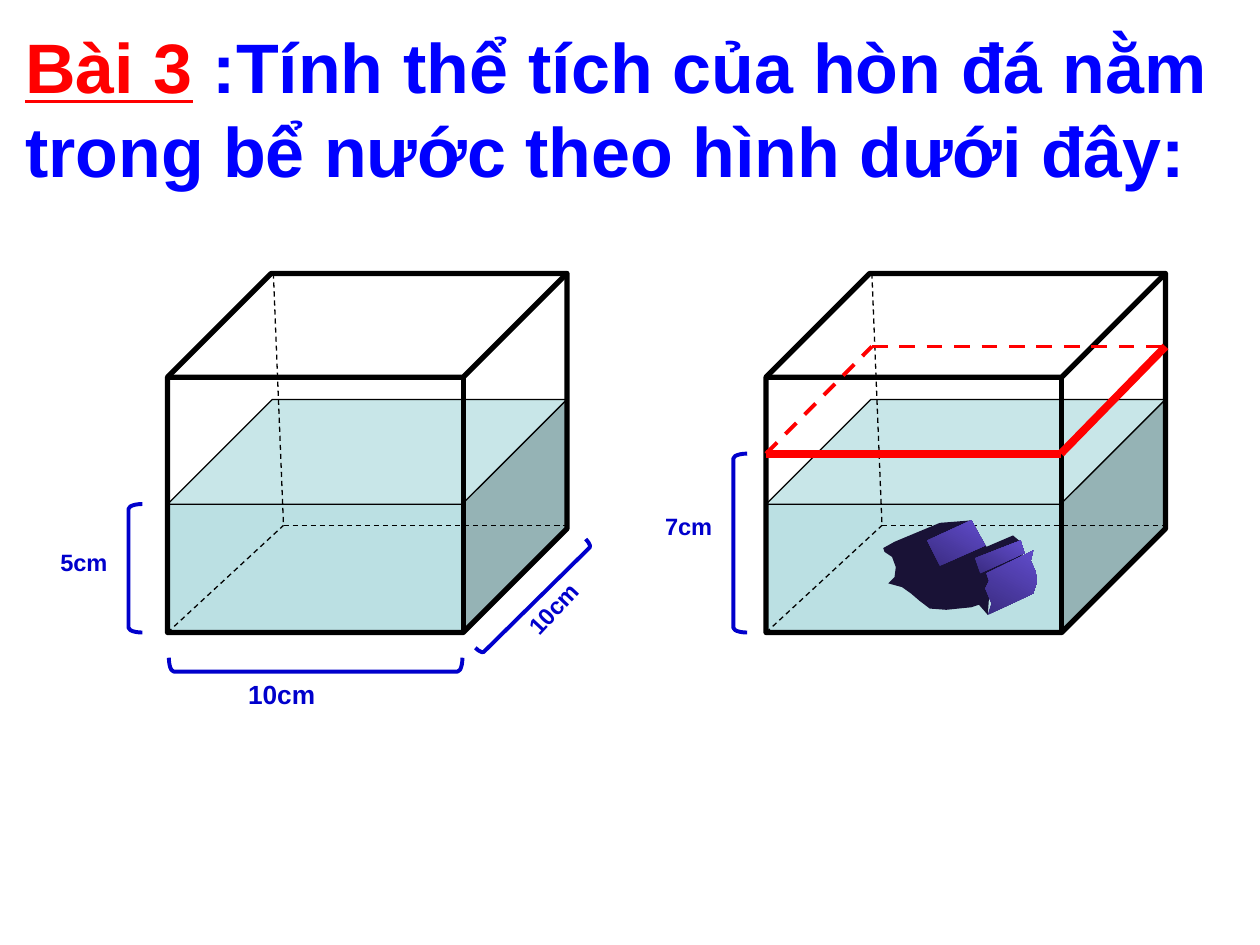
from dataclasses import dataclass
from lxml import etree
from pptx import Presentation
from pptx.dml.color import RGBColor
from pptx.enum.dml import MSO_LINE
from pptx.enum.shapes import MSO_CONNECTOR, MSO_SHAPE
from pptx.enum.text import MSO_ANCHOR, MSO_AUTO_SIZE, PP_ALIGN
from pptx.oxml.ns import qn
from pptx.util import Inches, Pt

CUBE = MSO_SHAPE.CUBE
BRACKET = MSO_SHAPE.RIGHT_BRACKET
STRAIGHT = MSO_CONNECTOR.STRAIGHT
DASH = MSO_LINE.DASH
TITLE_ONLY = 5

Point = tuple[float, float]


@dataclass(frozen=True)
class Theme:
    font: str = "Arial"
    title_size: float = 40
    label_size: float = 13.5
    base_label_size: float = 15
    thin: float = 0.75
    medium: float = 2.25
    edge: float = 3
    heavy: float = 4.5
    black: RGBColor = RGBColor(0, 0, 0)
    red: RGBColor = RGBColor(255, 0, 0)
    title_blue: RGBColor = RGBColor(0, 0, 255)
    measure_blue: RGBColor = RGBColor(0, 0, 0xCC)
    water: RGBColor = RGBColor(0xBB, 0xE0, 0xE3)
    rock_dark: RGBColor = RGBColor(0x19, 0x12, 0x36)
    rock_shade: RGBColor = RGBColor(0x3A, 0x2C, 0x82)
    rock_light: RGBColor = RGBColor(0x61, 0x4C, 0xCB)


THEME = Theme()


@dataclass(frozen=True)
class Box:
    left: float
    top: float
    width: float
    height: float

    def lengths(self):
        return [Inches(v) for v in (self.left, self.top, self.width, self.height)]


@dataclass(frozen=True)
class Measure:
    """A bracket along one edge of a tank, with its length."""
    text: str
    label: Box
    bracket: Box
    bracket_turn: float
    label_turn: float = 0
    size: float = THEME.label_size
    grouped: bool = False


MEASURES = [
    Measure("5cm", Box(0.38, 4.3, 0.69, 0.33), Box(1.02, 4, 0.11, 1.02), 180, grouped=True),
    Measure("10cm", Box(1.87, 5.33, 1.22, 0.35), Box(2.45, 4.11, 0.11, 2.33), 90,
            size=THEME.base_label_size),
    Measure("10cm", Box(4.05, 4.66, 0.69, 0.33), Box(4.2, 4.12, 0.07, 1.23), 45.4, 312.8),
    Measure("7cm", Box(5.18, 4.01, 0.69, 0.33), Box(5.82, 3.6, 0.11, 1.42), 180, grouped=True),
]

TANK_LEFTS = (1.33, 6.08)
TANK_TOP, TANK_BOTTOM, TANK_WIDTH, TANK_DEPTH = 2.17, 5.02, 3.17, 0.83
WATER_TOP = 3.17

# Rock: dark body first, then the lit sides
ROCK_BODY = [(7.01, 4.35), (7.1, 4.3), (7.46, 4.15), (7.71, 4.13), (7.83, 4.34),
             (8.04, 4.25), (8.1, 4.3), (8.12, 4.4), (7.86, 4.6), (7.84, 4.88),
             (7.77, 4.8), (7.71, 4.82), (7.51, 4.84), (7.38, 4.83), (7.3, 4.77),
             (7.23, 4.71), (7.16, 4.66), (7.05, 4.63), (7.1, 4.58), (7.11, 4.5),
             (7.08, 4.42), (7.02, 4.38)]
ROCK_SIDES = [
    [(7.36, 4.29), (7.71, 4.13), (7.82, 4.33), (7.46, 4.49)],
    [(7.74, 4.43), (8.1, 4.29), (8.13, 4.39), (7.78, 4.55)],
    [(7.83, 4.55), (8.2, 4.37), (8.18, 4.45), (8.22, 4.54), (8.23, 4.62),
     (8.2, 4.71), (7.84, 4.88), (7.87, 4.79), (7.82, 4.67), (7.85, 4.61)],
]


def add_run(paragraph, text: str, *, size: float, color: RGBColor, underline: bool = False):
    run = paragraph.add_run()
    run.text = text
    font = run.font
    font.name, font.size, font.bold = THEME.font, Pt(size), True
    font.color.rgb, font.underline = color, underline


def add_outlined(shapes, preset, box: Box, adjustment: float, *, color: RGBColor,
                 width: float, fill: RGBColor | None = None, turn: float = 0):
    shape = shapes.add_shape(preset, *box.lengths())
    shape.shadow.inherit = False
    shape.adjustments[0] = adjustment
    shape.rotation = turn
    shape.line.color.rgb, shape.line.width = color, Pt(width)
    if fill is None:
        shape.fill.background()
    else:
        shape.fill.solid()
        shape.fill.fore_color.rgb = fill


def add_line(shapes, start: Point, end: Point, *, color: RGBColor, width: float, dash=None):
    connector = shapes.add_connector(STRAIGHT, *map(Inches, start + end))
    connector.line.color.rgb, connector.line.width = color, Pt(width)
    if dash is not None:
        connector.line.dash_style = dash
    etree.SubElement(connector._element.spPr, qn("a:effectLst"))


def add_face(shapes, corners: list[Point], *, lit: bool):
    points = [(Inches(x), Inches(y)) for x, y in corners]
    builder = shapes.build_freeform(*points[0])
    builder.add_line_segments(points[1:], close=True)
    face = builder.convert_to_shape()
    face.shadow.inherit = False
    face.line.fill.background()
    if lit:
        face.fill.gradient()
        face.fill.gradient_angle = 60
        for stop, color in zip(face.fill.gradient_stops, (THEME.rock_shade, THEME.rock_light)):
            stop.color.rgb = color
    else:
        face.fill.solid()
        face.fill.fore_color.rgb = THEME.rock_dark


def add_rock(shapes):
    add_face(shapes, ROCK_BODY, lit=False)
    for side in ROCK_SIDES:
        add_face(shapes, side, lit=True)


def add_tank(shapes, left: float, *, with_rock: bool):
    # Water, hidden edges, rock, then the glass in front
    right = left + TANK_WIDTH
    water_height = TANK_BOTTOM - WATER_TOP
    add_outlined(shapes, CUBE, Box(left, WATER_TOP, TANK_WIDTH, water_height), 0.45,
                 color=THEME.black, width=THEME.thin, fill=THEME.water)
    back_corner = (left + 0.92, 4.17)
    for start, end in (((left + 0.84, TANK_TOP), back_corner),
                       (back_corner, (right, 4.17)),
                       ((left, TANK_BOTTOM), back_corner)):
        add_line(shapes, start, end, color=THEME.black, width=THEME.thin, dash=DASH)
    if with_rock:
        add_rock(shapes)
    add_outlined(shapes, CUBE, Box(left, TANK_TOP, TANK_WIDTH, TANK_BOTTOM - TANK_TOP), 0.289,
                 color=THEME.black, width=THEME.edge)


def add_raised_level(shapes, left: float, front: float = 3.6, back: float = 2.75):
    right = left + TANK_WIDTH
    front_left, front_right = (left, front), (right - TANK_DEPTH, front)
    back_left, back_right = (left + 0.84, back), (right, back)
    for start, end in ((front_left, back_left), (back_left, back_right)):
        add_line(shapes, start, end, color=THEME.red, width=THEME.medium, dash=DASH)
    for start, end in ((back_right, front_right), (front_right, front_left)):
        add_line(shapes, start, end, color=THEME.red, width=THEME.heavy)


def add_measure(shapes, measure: Measure):
    target = shapes.add_group_shape().shapes if measure.grouped else shapes
    add_outlined(target, BRACKET, measure.bracket, 0.347, color=THEME.measure_blue,
                 width=THEME.medium, turn=measure.bracket_turn)
    label = target.add_textbox(*measure.label.lengths())
    label.rotation = measure.label_turn
    label.text_frame.word_wrap = True
    add_run(label.text_frame.paragraphs[0], measure.text, size=measure.size,
            color=THEME.measure_blue)


def add_title(slide):
    title = slide.shapes.title
    title.left, title.top, title.width, title.height = Box(0.1, 0.14, 9.58, 1.45).lengths()
    frame = title.text_frame
    frame.word_wrap, frame.auto_size = True, MSO_AUTO_SIZE.NONE
    frame.vertical_anchor = MSO_ANCHOR.TOP
    paragraph = frame.paragraphs[0]
    paragraph.alignment = PP_ALIGN.JUSTIFY
    add_run(paragraph, "Bài 3", size=THEME.title_size, color=THEME.red, underline=True)
    add_run(paragraph, " :Tính thể tích của hòn đá nằm trong bể nước theo hình dưới đây:",
            size=THEME.title_size, color=THEME.title_blue)


def main():
    deck = Presentation()
    deck.slide_width, deck.slide_height = Inches(10), Inches(7.5)
    slide = deck.slides.add_slide(deck.slide_layouts[TITLE_ONLY])
    add_title(slide)
    for left, with_rock in zip(TANK_LEFTS, (False, True)):
        add_tank(slide.shapes, left, with_rock=with_rock)
    add_raised_level(slide.shapes, TANK_LEFTS[1])
    for measure in MEASURES:
        add_measure(slide.shapes, measure)
    deck.save("out.pptx")


if __name__ == "__main__":
    main()
